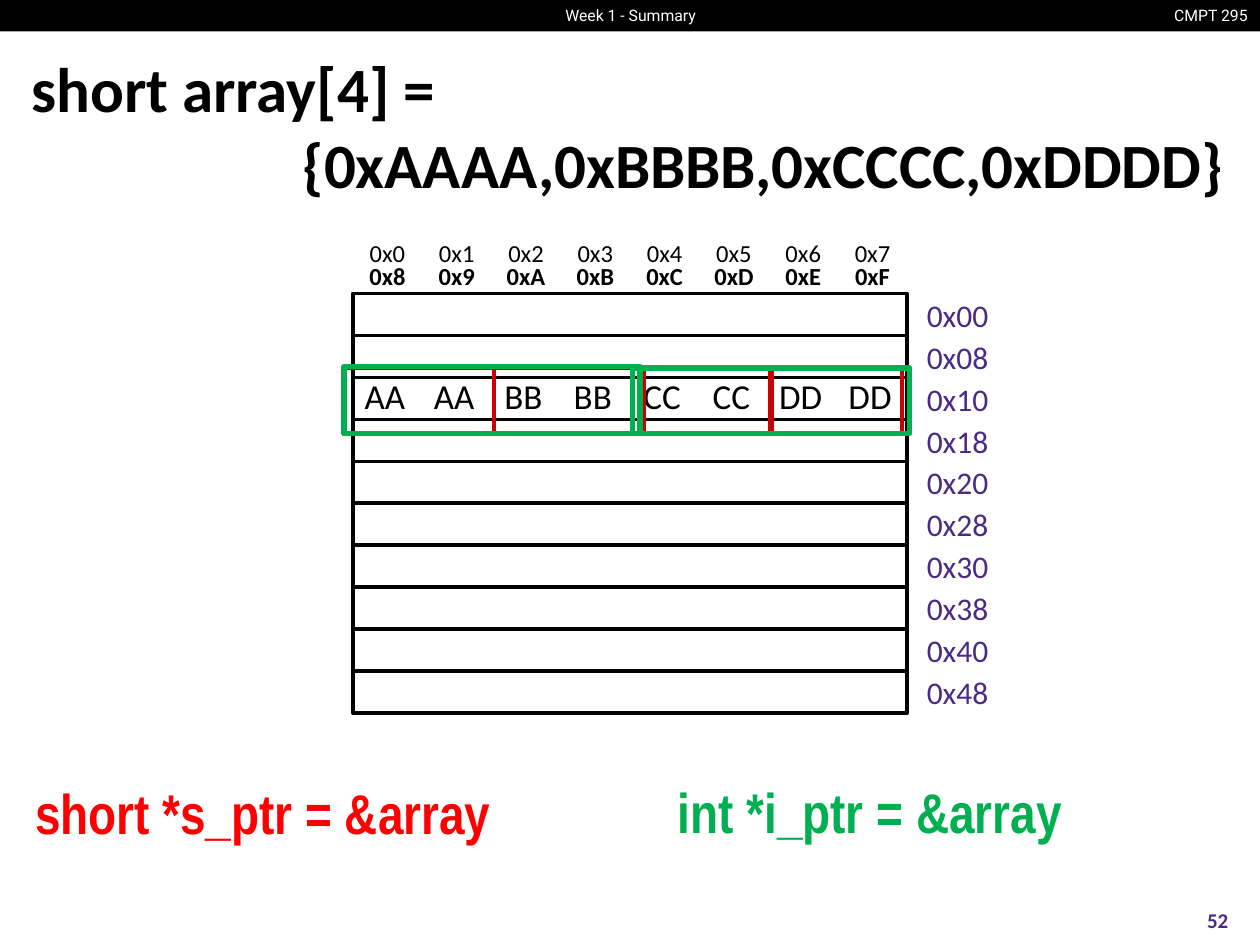
from pptx import Presentation
from pptx.dml.color import RGBColor
from pptx.enum.shapes import MSO_SHAPE
from pptx.enum.text import MSO_ANCHOR, MSO_AUTO_SIZE, PP_ALIGN
from pptx.util import Inches, Pt

RECTANGLE = MSO_SHAPE.RECTANGLE
TOP, MIDDLE = MSO_ANCHOR.TOP, MSO_ANCHOR.MIDDLE
LEFT, CENTER, RIGHT = PP_ALIGN.LEFT, PP_ALIGN.CENTER, PP_ALIGN.RIGHT
NO_FIT = MSO_AUTO_SIZE.NONE

BLACK = RGBColor(0x00, 0x00, 0x00)
WHITE = RGBColor(0xFF, 0xFF, 0xFF)
PURPLE = RGBColor(0x4B, 0x2A, 0x85)
RED = RGBColor(0xFF, 0x00, 0x00)
DARK_RED = RGBColor(0xCC, 0x00, 0x00)
GREEN = RGBColor(0x00, 0xB0, 0x50)

BODY_FONT = "Calibri"
WORD_BYTES = 8
WORD_COUNT = 10
ARRAY_BYTES = ["AA", "AA", "BB", "BB", "CC", "CC", "DD", "DD"]
ARRAY_ROW = 2


def style(para, size, color, bold=False, name=BODY_FONT, align=LEFT):
    para.alignment = align
    font = para.font
    font.name, font.size, font.bold = name, Pt(size), bold
    font.color.rgb = color


def add_text(page, box, text, size, color, anchor=MIDDLE, wrap=False, margin=None, **look):
    """Add a text box at box (left, top, width, height, in inches)."""
    shape = page.shapes.add_textbox(*map(Inches, box))
    frame = shape.text_frame
    frame.word_wrap = wrap
    frame.vertical_anchor = anchor
    if margin is not None:
        frame.margin_left = frame.margin_right = Inches(margin)
        frame.margin_top = frame.margin_bottom = Inches(margin)
    frame.text = text
    for para in frame.paragraphs:
        style(para, size, color, **look)
    return frame


def add_frame(page, box, color, width):
    shape = page.shapes.add_shape(RECTANGLE, *map(Inches, box))
    shape.shadow.inherit = False
    shape.fill.background()
    shape.line.color.rgb = color
    shape.line.width = Pt(width)
    return shape


def add_header(page, box):
    left, top, width, height = box
    band = add_frame(page, box, BLACK, 1)
    band.fill.solid()
    band.fill.fore_color.rgb = BLACK
    band.line.fill.background()
    labels = [("CMPT 295", left + width - 0.81, 0.81, RIGHT),
              ("Week 1 - Summary", left + 4.3, 1.41, CENTER)]
    for text, label_left, label_width, align in labels:
        add_text(page, (label_left, top, label_width, height), text, 9, WHITE,
                 anchor=TOP, name="Roboto", align=align)


def add_title(page, box):
    title = page.shapes.title
    title.left, title.top, title.width, title.height = map(Inches, box)
    frame = title.text_frame
    frame.auto_size = NO_FIT
    frame.vertical_anchor = MIDDLE
    frame.text = "short array[4] =\v{0xAAAA,0xBBBB,0xCCCC,0xDDDD}"
    para = frame.paragraphs[0]
    style(para, 36, BLACK, bold=True)
    # A hanging indent sets the second line to the right
    properties = para._p.get_or_add_pPr()
    properties.set("marL", str(Inches(2.15)))
    properties.set("indent", str(-Inches(2.15)))


def add_memory(page, box):
    left, top, width, height = box
    row_height = height / WORD_COUNT
    byte_width = width / WORD_BYTES

    # Words and their addresses
    for row in range(WORD_COUNT):
        row_top = top + row * row_height
        add_frame(page, (left, row_top, width, row_height), BLACK, 2)
        add_text(page, (left + width, row_top, 0.8, row_height),
                 f"0x{row * WORD_BYTES:02X}", 18, PURPLE, align=CENTER)

    # Byte offsets above, array contents in their row
    for column, value in enumerate(ARRAY_BYTES):
        byte_left = left + column * byte_width
        offsets = add_text(page, (byte_left, top - 0.41, byte_width, 0.4),
                           f"0x{column:X}\n0x{column + WORD_BYTES:X}", 14, BLACK, align=CENTER)
        for para in offsets.paragraphs:
            para.line_spacing = 0.8
        offsets.paragraphs[1].font.bold = True
        add_text(page, (byte_left - 0.02, top + ARRAY_ROW * row_height - 0.02,
                        byte_width, row_height),
                 value, 20, BLACK, margin=0, align=CENTER)


def add_pointer(page, box, text, color, outline, line_width, elements):
    """Add a pointer declaration and outline the elements it steps over."""
    add_text(page, box, text, 32, color, anchor=TOP, wrap=True, bold=True, name="Arial Narrow")
    for element in elements:
        add_frame(page, element, outline, line_width)


def main():
    deck = Presentation()
    deck.slide_width, deck.slide_height = Inches(10), Inches(7.5)
    page = deck.slides.add_slide(deck.slide_layouts[5])

    add_header(page, (0, 0, 10, 0.25))
    add_title(page, (0.15, 0.66, 11.36, 0.67))
    add_text(page, (9.33, 7.1, 0.67, 0.4), "52", 12, PURPLE, wrap=True, bold=True, align=CENTER)
    add_memory(page, (2.8, 2.33, 4.4, 3.33))

    shorts = [(left, 2.92, width, 0.53)
              for left, width in [(2.73, 1.19), (3.92, 1.19), (5.08, 1.03), (6.13, 1.03)]]
    ints = [(2.73, 2.91, 2.35, 0.53), (5.02, 2.92, 2.2, 0.52)]
    add_pointer(page, (0.18, 6.13, 5.79, 0.64), "short *s_ptr = &array",
                RED, DARK_RED, 2, shorts)
    add_pointer(page, (5.28, 6.12, 5.79, 0.64), "int *i_ptr = &array",
                GREEN, GREEN, 3, ints)

    deck.save("out.pptx")


if __name__ == "__main__":
    main()
